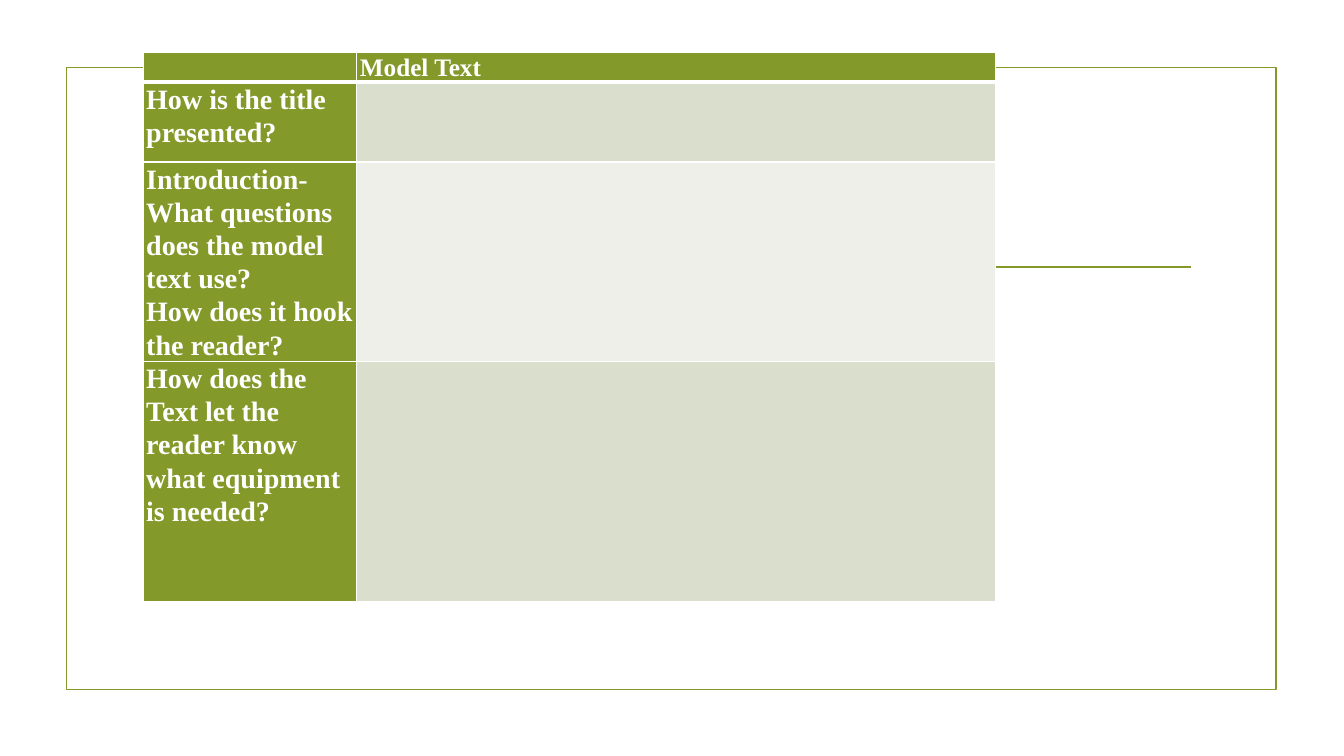
from lxml import etree
from pptx import Presentation
from pptx.dml.color import RGBColor
from pptx.enum.shapes import MSO_CONNECTOR, MSO_SHAPE
from pptx.oxml.ns import qn
from pptx.util import Inches, Pt

RECT = MSO_SHAPE.RECTANGLE
STRAIGHT = MSO_CONNECTOR.STRAIGHT
GREEN, WHITE = "83992A", "FFFFFF"
BANDS = ["D9DECD", "EDEFE8"]


def color(code):
    return RGBColor.from_string(code)


def border(cell, side, width):
    line = etree.SubElement(cell._tc.get_or_add_tcPr(), qn("a:" + side), w=str(Pt(width)))
    fill = etree.SubElement(line, qn("a:solidFill"))
    etree.SubElement(fill, qn("a:srgbClr"), val=WHITE)


deck = Presentation()
deck.slide_width, deck.slide_height = Inches(13.33), Inches(7.5)
slide = deck.slides.add_slide(deck.slide_layouts[6])
shapes = slide.shapes

frame = shapes.add_shape(RECT, Inches(0.66), Inches(0.67), Inches(12), Inches(6.17))
frame.shadow.inherit = False
frame.fill.background()

rule = shapes.add_connector(STRAIGHT, Inches(1.53), Inches(2.65), Inches(11.81), Inches(2.65))
etree.SubElement(rule._element.spPr, qn("a:effectLst"))

for item in (frame, rule):
    item.line.color.rgb = color(GREEN)
    item.line.width = Pt(1.25)

rows = [
    (0.26, "", "Model Text"),
    (0.79, "How is the title presented?", ""),
    (1.85, "Introduction-\nWhat questions does the model text use?\nHow does it hook the reader?", ""),
    (2.38, "How does the Text let the reader know what equipment is needed?", ""),
]
table = shapes.add_table(len(rows), 2, Inches(1.42), Inches(0.52), Inches(8.45), Inches(5.28)).table
for col, width in zip(table.columns, (2.12, 6.33)):
    col.width = Inches(width)

for r, (height, *texts) in enumerate(rows):
    table.rows[r].height = Inches(height)
    for c, text in enumerate(texts):
        cell = table.cell(r, c)
        cell.margin_left = cell.margin_right = Inches(0.03)
        cell.margin_top = cell.margin_bottom = 0
        for side in ("lnL", "lnR", "lnT", "lnB"):
            thick = (r, side) in ((0, "lnB"), (1, "lnT"))
            border(cell, side, 3 if thick else 1)
        cell.fill.solid()
        cell.fill.fore_color.rgb = color(GREEN if r == 0 or c == 0 else BANDS[(r - 1) % 2])
        cell.text = text
        for para in cell.text_frame.paragraphs:
            para.line_spacing = 1.07
            para.font.name = "Times New Roman"
            para.font.size = Pt(20 if r else 18)
            para.font.bold = True
            para.font.color.rgb = color(WHITE)

deck.save("out.pptx")
